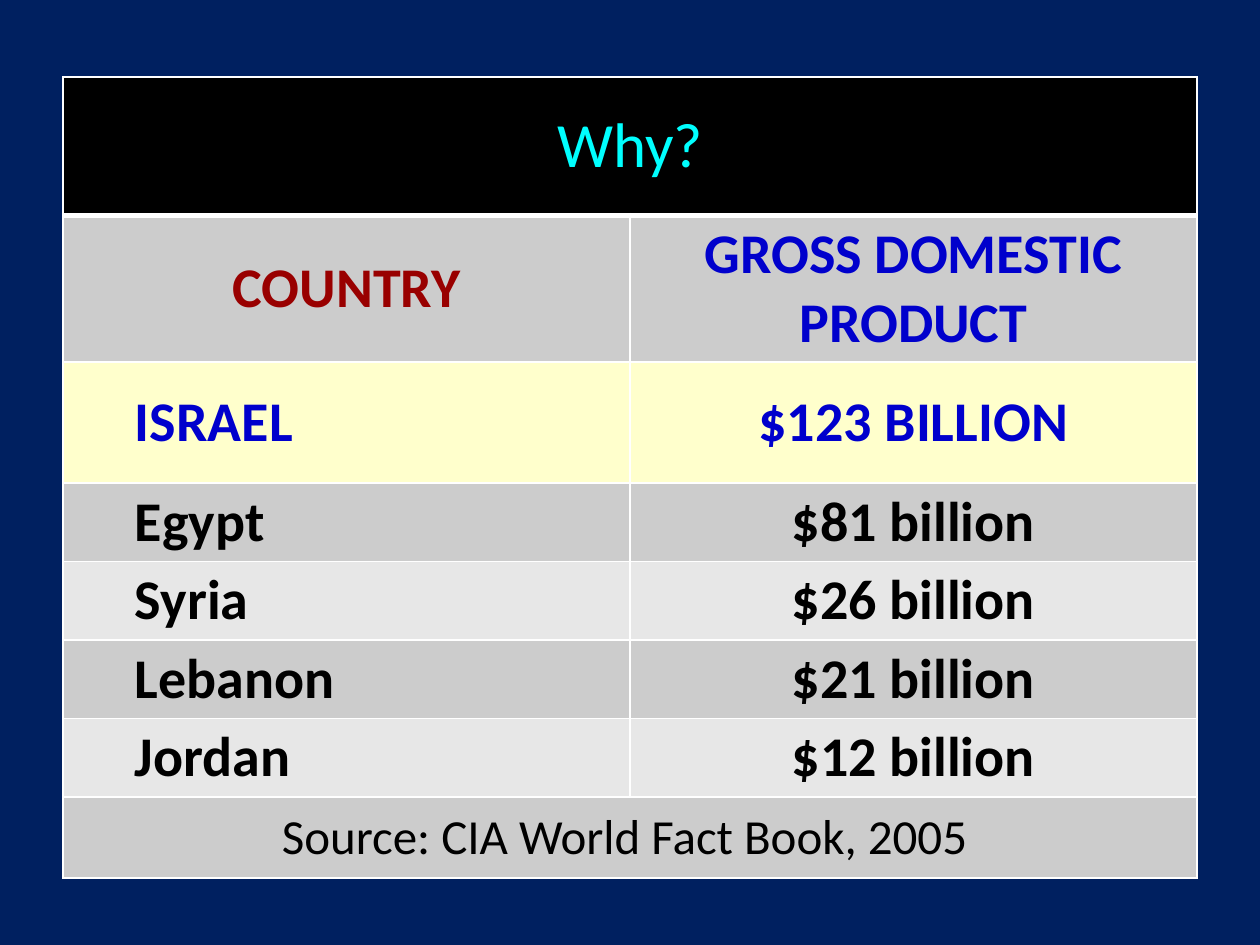
from dataclasses import dataclass
from typing import Optional

from lxml import etree
from pptx import Presentation
from pptx.dml.color import RGBColor
from pptx.enum import text
from pptx.oxml import ns
from pptx.util import Cm, Pt

NAVY = RGBColor(0x00, 0x20, 0x60)
BLACK = RGBColor(0x00, 0x00, 0x00)
WHITE = RGBColor(0xFF, 0xFF, 0xFF)
CYAN = RGBColor(0x00, 0xFF, 0xFF)
RED = RGBColor(0x99, 0x00, 0x00)
BLUE = RGBColor(0x00, 0x00, 0xCC)
CREAM = RGBColor(0xFF, 0xFF, 0xCC)
GREY = RGBColor(0xCC, 0xCC, 0xCC)
LIGHT = RGBColor(0xE7, 0xE7, 0xE7)

CELL = {
    "margin_left": Cm(0.18),
    "margin_right": Cm(0.18),
    "margin_top": Cm(0.1),
    "margin_bottom": Cm(0.1),
    "vertical_anchor": text.MSO_ANCHOR.MIDDLE,
}


@dataclass
class Row:
    label: str
    value: Optional[str]
    height: float
    fill: RGBColor
    color: RGBColor = BLACK
    label_color: Optional[RGBColor] = None
    size: int = 32
    bold: bool = True
    indented: bool = False
    top: int = 1
    bottom: int = 1


GDP = [
    ("Egypt", "$81 billion"),
    ("Syria", "$26 billion"),
    ("Lebanon", "$21 billion"),
    ("Jordan", "$12 billion"),
]

ROWS = [
    Row("Why?", None, 2.79, BLACK, CYAN, size=36, bold=False, bottom=3),
    Row("COUNTRY", "GROSS DOMESTIC PRODUCT", 2.84, GREY, BLUE, RED, top=3),
    Row("ISRAEL", "$123 BILLION", 2.44, CREAM, BLUE, indented=True),
    *(
        Row(country, gdp, 1.56, (GREY, LIGHT)[i % 2], indented=True)
        for i, (country, gdp) in enumerate(GDP)
    ),
    Row("Source: CIA World Fact Book, 2005 ", None, 1.63, GREY, size=28, bold=False),
]


def set_attrs(obj, values: dict) -> None:
    for name, value in values.items():
        setattr(obj, name, value)


def set_borders(cell, top: int, bottom: int) -> None:
    tcPr = cell._tc.get_or_add_tcPr()
    widths = {"lnL": 1, "lnR": 1, "lnT": top, "lnB": bottom}
    for i, (tag, width) in enumerate(widths.items()):
        ln = etree.Element(ns.qn(f"a:{tag}"), w=str(Pt(width)))
        fill = etree.SubElement(ln, ns.qn("a:solidFill"))
        etree.SubElement(fill, ns.qn("a:srgbClr"), val=str(WHITE))
        tcPr.insert(i, ln)


def write(cell, content: str, row: Row, color: RGBColor, indented: bool) -> None:
    p = cell.text_frame.paragraphs[0]
    if indented:
        p.level = 1
        p._p.get_or_add_pPr().set("marL", str(Cm(1.27)))
    else:
        p.alignment = text.PP_ALIGN.CENTER
    r = p.add_run()
    r.text = content
    set_attrs(r.font, {"name": "Calibri", "size": Pt(row.size), "bold": row.bold})
    r.font.color.rgb = color


def draw_row(tbl, i: int, row: Row) -> None:
    tbl.rows[i].height = Cm(row.height)
    label, value = tbl.cell(i, 0), tbl.cell(i, 1)
    for cell in (label, value):
        set_attrs(cell, CELL)
        cell.fill.solid()
        cell.fill.fore_color.rgb = row.fill
        set_borders(cell, row.top, row.bottom)
    write(label, row.label, row, row.label_color or row.color, row.indented)
    if row.value is None:
        label.merge(value)
    else:
        write(value, row.value, row, row.color, False)


def main() -> None:
    prs = Presentation()
    set_attrs(prs, {"slide_width": Cm(25.4), "slide_height": Cm(19.05)})
    s = prs.slides.add_slide(prs.slide_layouts[6])
    s.background.fill.solid()
    s.background.fill.fore_color.rgb = NAVY
    height = sum(row.height for row in ROWS)
    tbl = s.shapes.add_table(
        len(ROWS), 2, Cm(1.27), Cm(1.55), Cm(22.86), Cm(height)
    ).table
    set_attrs(tbl, {"first_row": False, "horz_banding": False})
    for i, row in enumerate(ROWS):
        draw_row(tbl, i, row)
    prs.save("out.pptx")


if __name__ == "__main__":
    main()
